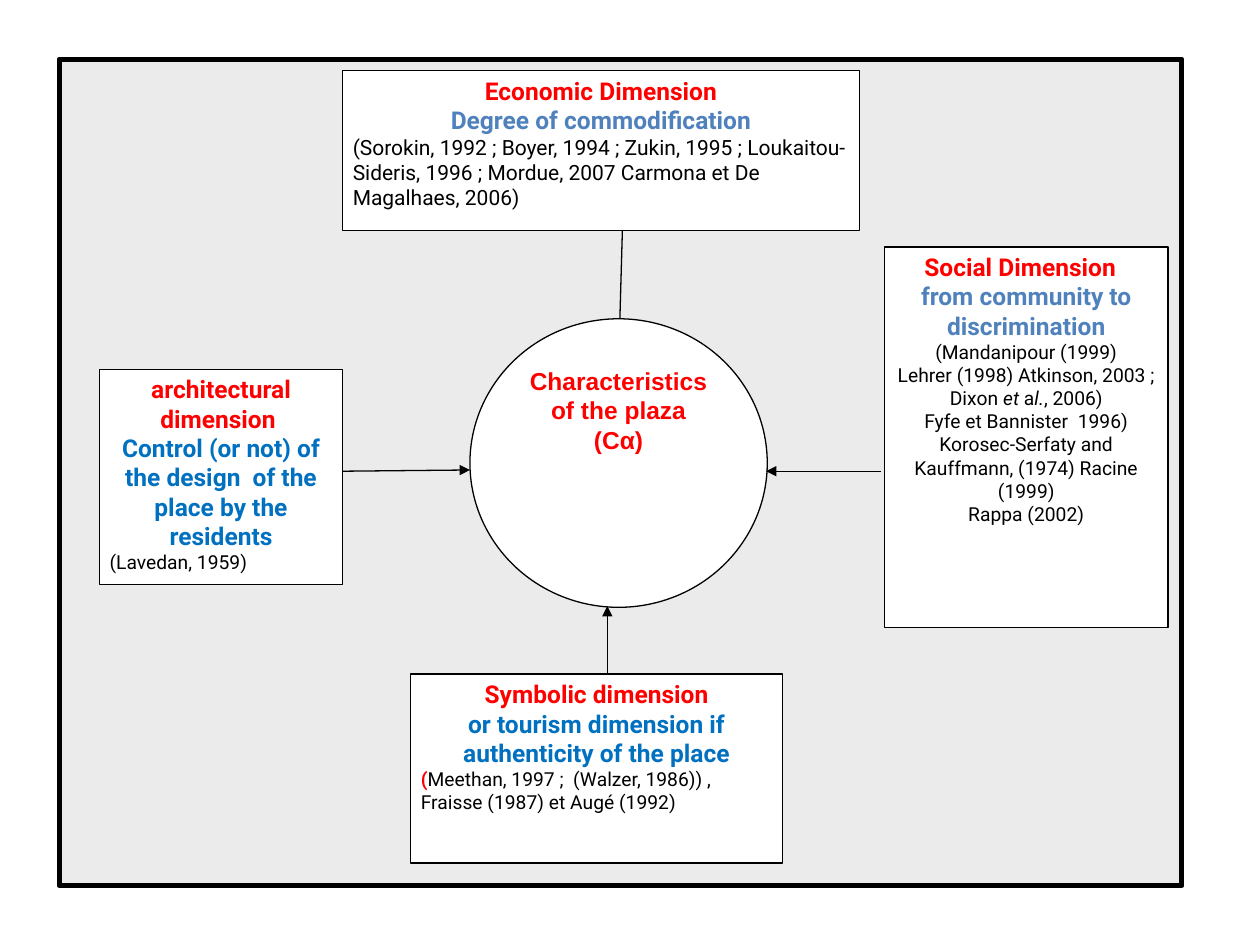
from pptx import Presentation
from pptx.dml.color import RGBColor
from pptx.enum.shapes import MSO_CONNECTOR as Conn, MSO_SHAPE as Kind
from pptx.enum.text import MSO_ANCHOR as Anchor, PP_ALIGN as Align
from pptx.oxml.ns import qn
from pptx.util import Inches, Pt
from lxml import etree

RED, BLUE, STEEL, BLACK = "FF0000", "0070C0", "4F81BD", "000000"
MID, LEFT = Align.CENTER, Align.LEFT
color = RGBColor.from_string

deck = Presentation()
deck.slide_width, deck.slide_height = Inches(10), Inches(7.5)
slide = deck.slides.add_slide(deck.slide_layouts[6])


def draw(kind, at, fill, width):
    shape = slide.shapes.add_shape(kind, *[Inches(n) for n in at])
    shape.shadow.inherit = False
    shape.fill.solid()
    shape.fill.fore_color.rgb = color(fill)
    shape.line.color.rgb = color(BLACK)
    shape.line.width = Pt(width)
    return shape


def write(shape, paras, face):
    """Each para is (runs, size, colour, bold, align); a run is (text, look)."""
    frame = shape.text_frame
    frame.word_wrap = True
    frame.vertical_anchor = Anchor.TOP
    frame.margin_left = frame.margin_right = Inches(0.08)
    frame.margin_top = frame.margin_bottom = Inches(0.04)
    for i, (runs, size, ink, bold, align) in enumerate(paras):
        para = frame.add_paragraph() if i else frame.paragraphs[0]
        para.alignment = align
        font = para.font
        font.name, font.size, font.bold = face, Pt(size), bold
        font.color.rgb = color(ink)
        for text, look in runs:
            run = para.add_run()
            run.text = text
            # A shape's own style is white, so each run states its colour
            run.font.color.rgb = color(RED if look == "red" else ink)
            if look == "italic":
                run.font.italic = True
            if look == "red":
                run.font.bold = True


# Framed backdrop, 30 % opaque
back = draw(Kind.RECTANGLE, (0.47, 0.47, 8.91, 6.56), "C0C0C0", 3)
tint = back.fill._xPr.find(qn("a:solidFill"))[0]
etree.SubElement(tint, qn("a:alpha")).set("val", "30000")

# Central circle
hub = draw(Kind.OVAL, (3.73, 2.53, 2.36, 2.29), "FFFFFF", 0.75)
lines = ["Characteristics of the plaza", "(Cα)"]
write(hub, [([(t, "")], 14, RED, True, MID) for t in lines], "Arial")

# Links between the boxes and the circle
links = [
    ((2.72, 3.74), (3.73, 3.73), True),
    ((6.99, 3.74), (6.08, 3.74), True),
    ((4.82, 5.35), (4.82, 4.81), True),
    ((4.94, 1.82), (4.92, 2.53), False),
]
for start, end, arrow in links:
    link = slide.shapes.add_connector(
        Conn.STRAIGHT, *[Inches(n) for n in start + end])
    link.line.color.rgb = color(BLACK)
    link.line.width = Pt(0.75)
    if arrow:
        tip = etree.SubElement(link.line._get_or_add_ln(), qn("a:tailEnd"))
        tip.set("type", "triangle")
    etree.SubElement(link._element.spPr, qn("a:effectLst"))

# Dimension boxes: place, title, subtitle and its colour, sources
boxes = [
    ((0.79, 2.93, 1.93, 1.71), "architectural dimension ",
     "Control (or not) of the design  of the place by the residents", BLUE,
     11, LEFT, [[("(Lavedan, 1959)", "")]]),
    ((7.02, 1.96, 2.25, 3.02), "Social Dimension  ",
     "from community to discrimination", STEEL,
     11, MID, [
         [("(Mandanipour (1999)", "")],
         [("Lehrer (1998) Atkinson, 2003 ; Dixon ", ""), ("et", "italic"),
          (" a", ""), ("l.", "italic"), (", 2006)", "")],
         [("Fyfe et Bannister  1996)", "")],
         [("Korosec-Serfaty and Kauffmann, (1974) Racine (1999)", "")],
         [("Rappa (2002)", "")]]),
    ((2.72, 0.56, 4.1, 1.27), "Economic Dimension",
     "Degree of commodification", STEEL,
     12, LEFT, [[("(Sorokin, 1992 ; Boyer, 1994 ; Zukin, 1995 ; "
                  "Loukaitou-Sideris, 1996 ; Mordue, 2007 "
                  "Carmona et De Magalhaes, 2006)", "")]]),
    ((3.26, 5.35, 2.95, 1.5), "Symbolic dimension",
     "or tourism dimension if authenticity of the place", BLUE,
     11, LEFT, [[("(", "red"), ("Meethan, 1997 ;  (Walzer, 1986)) , "
                                "Fraisse (1987) et Augé (1992)", "")]]),
]
for at, title, sub, ink, size, align, refs in boxes:
    heads = [([(title, "")], 14, RED, True, MID),
             ([(sub, "")], 14, ink, True, MID)]
    cites = [(runs, size, BLACK, False, align) for runs in refs]
    write(draw(Kind.RECTANGLE, at, "FFFFFF", 0.75), heads + cites, "Roboto")

deck.save("out.pptx")
